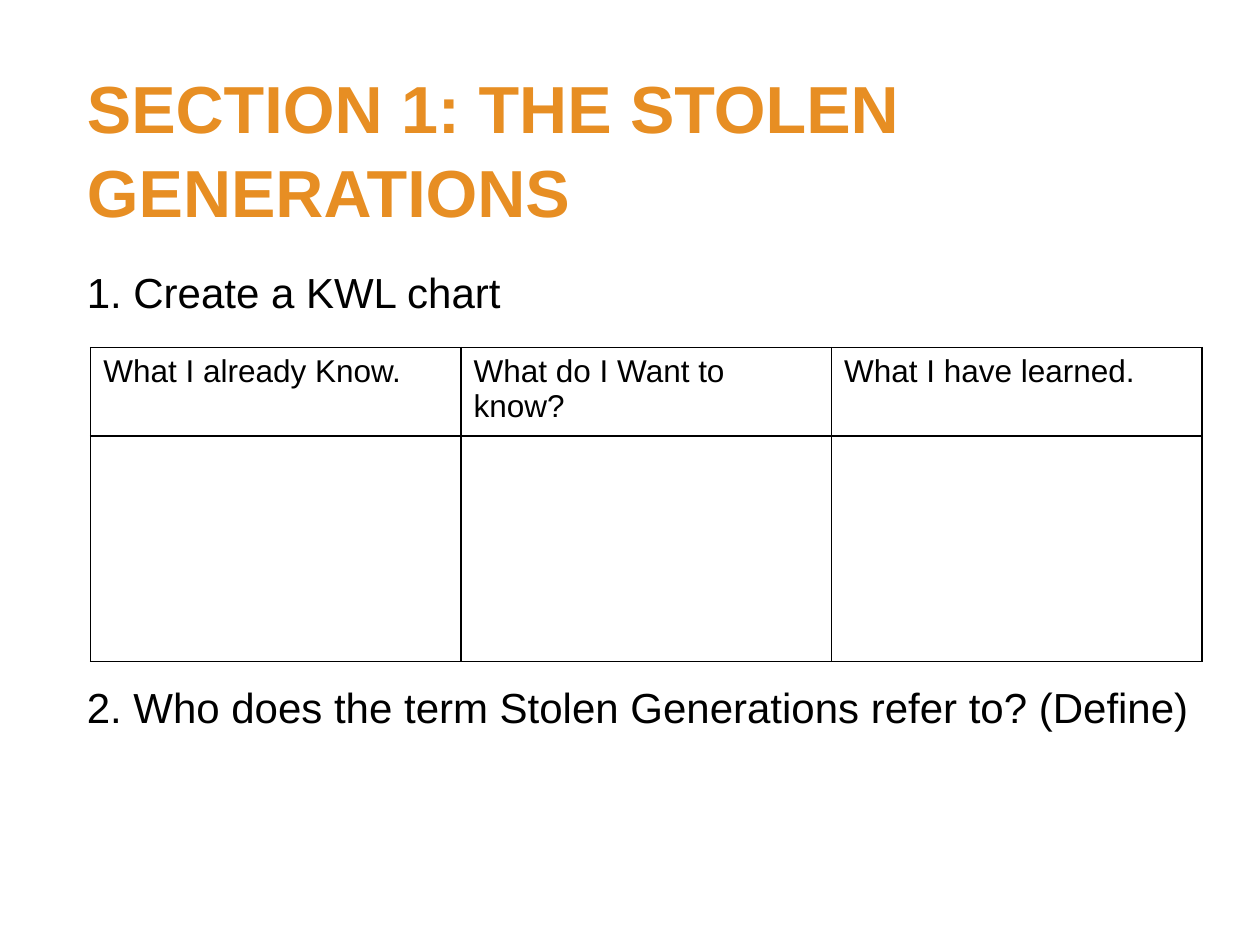
"""Build the Stolen Generations worksheet slide with a KWL table."""
from typing import NamedTuple

from lxml.etree import SubElement
from pptx import Presentation as new_presentation
from pptx.dml.color import RGBColor
from pptx.enum.text import MSO_ANCHOR, PP_ALIGN
from pptx.oxml.ns import qn
from pptx.util import Inches, Pt

ORANGE = RGBColor(0xE7, 0x8E, 0x23)
BLACK = RGBColor(0x00, 0x00, 0x00)
FONT_NAME = "Arial"
LEFT = Inches(0.59)
LINE_SPACING = 1.05
HEADINGS = ("What I already Know.", "What do I Want to know?", "What I have learned.")
ROW_HEIGHTS = (0.66, 1.79)
COLUMN_WIDTH = 2.94
BORDER_SIDES = ("a:lnL", "a:lnR", "a:lnT", "a:lnB")


class Question(NamedTuple):
    text: str
    space_before: float


QUESTIONS = (
    Question("1. Create a KWL chart", 0),
    Question("2. Who does the term Stolen Generations refer to? (Define)", 206.5),
)


def style_paragraph(paragraph, size: float, color: RGBColor, bold: bool = False) -> None:
    """Apply the slide's font to every run of a paragraph."""
    paragraph.alignment = PP_ALIGN.LEFT
    for run in paragraph.runs:
        run.font.name = FONT_NAME
        run.font.size = Pt(size)
        run.font.bold = bold
        run.font.color.rgb = color


def add_title(slide, text: str) -> None:
    """Place and format the title placeholder."""
    title = slide.shapes.title
    title.left, title.top = LEFT, Inches(0.45)
    title.width, title.height = Inches(8.7), Inches(1.25)
    title.text_frame.text = text
    title.text_frame.word_wrap = True
    title.text_frame.vertical_anchor = MSO_ANCHOR.TOP
    paragraph = title.text_frame.paragraphs[0]
    paragraph.line_spacing = LINE_SPACING
    style_paragraph(paragraph, 38, ORANGE, bold=True)


def add_questions(slide, questions: tuple[Question, ...]) -> None:
    """Write the questions, leaving room for the table between them."""
    box = slide.shapes.add_textbox(LEFT, Inches(2.05), Inches(9.09), Inches(4.25))
    frame = box.text_frame
    frame.word_wrap = True
    frame.text = "\n".join(question.text for question in questions)
    for paragraph, question in zip(frame.paragraphs, questions):
        paragraph.line_spacing = LINE_SPACING
        paragraph.space_before = Pt(question.space_before)
        style_paragraph(paragraph, 24, BLACK)


def format_cell(cell) -> None:
    """Give a cell thin black borders and no fill."""
    properties = cell._tc.get_or_add_tcPr()
    for side in BORDER_SIDES:
        line = SubElement(properties, qn(side), w=str(Pt(1)))
        fill = SubElement(line, qn("a:solidFill"))
        SubElement(fill, qn("a:srgbClr"), val=str(BLACK))
    cell.fill.background()


def add_kwl_table(slide) -> None:
    """Draw the KWL table with an empty row for answers."""
    table = slide.shapes.add_table(
        len(ROW_HEIGHTS), len(HEADINGS), Inches(0.72), Inches(2.76),
        Inches(COLUMN_WIDTH * len(HEADINGS)), Inches(sum(ROW_HEIGHTS)),
    ).table
    table.first_row = table.horz_banding = False
    for row, height in zip(table.rows, ROW_HEIGHTS):
        row.height = Inches(height)
    for column, heading in enumerate(HEADINGS):
        table.columns[column].width = Inches(COLUMN_WIDTH)
        cell = table.cell(0, column)
        cell.text_frame.text = heading
        style_paragraph(cell.text_frame.paragraphs[0], 18, BLACK)
    for cell in table.iter_cells():
        format_cell(cell)


def main() -> None:
    """Create and save the presentation."""
    presentation = new_presentation()
    presentation.slide_width, presentation.slide_height = Inches(10), Inches(7.5)
    slide = presentation.slides.add_slide(presentation.slide_layouts[5])
    add_title(slide, "SECTION 1: THE STOLEN GENERATIONS")
    add_questions(slide, QUESTIONS)
    add_kwl_table(slide)
    presentation.save("out.pptx")


if __name__ == "__main__":
    main()
